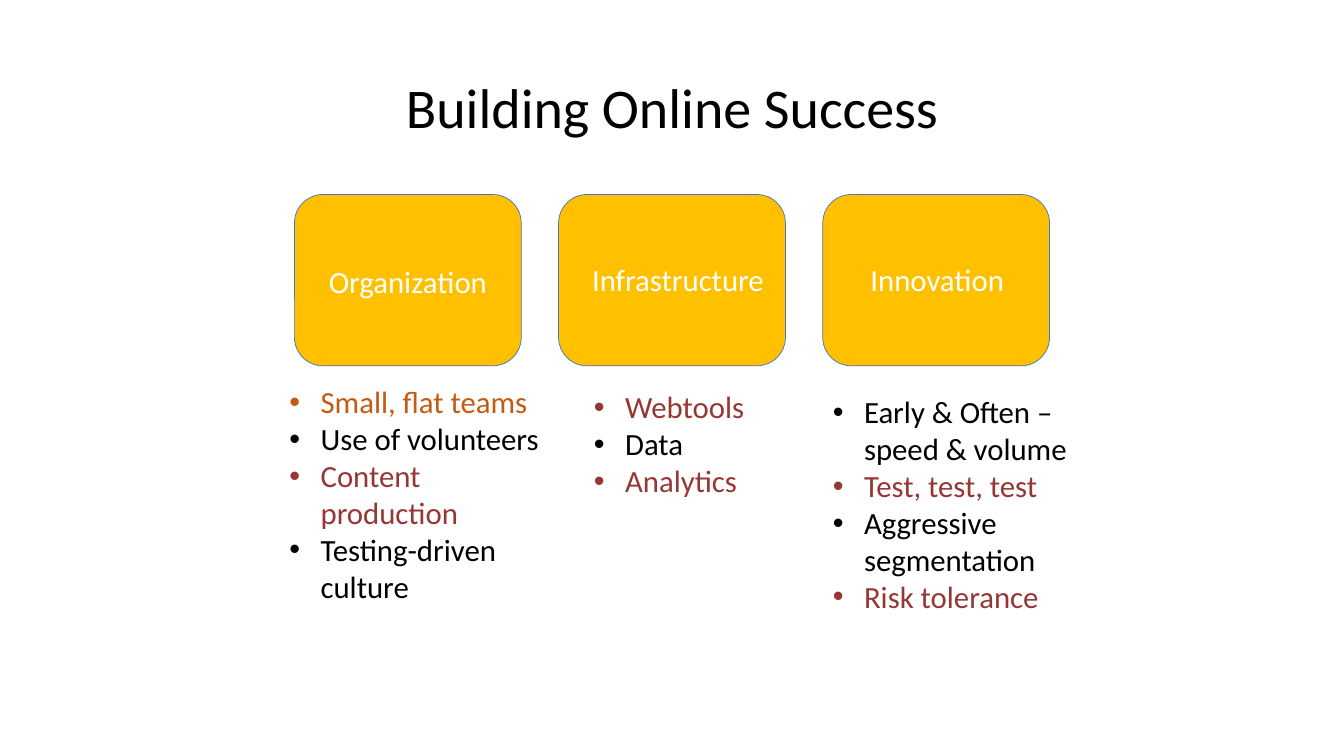
"""Builds the Building Online Success slide."""
from lxml import etree
from pptx import Presentation
from pptx.dml.color import RGBColor
from pptx.enum.shapes import MSO_SHAPE
from pptx.enum.text import MSO_ANCHOR, MSO_AUTO_SIZE, PP_ALIGN
from pptx.oxml.ns import qn
from pptx.util import Emu, Pt

ROUNDED = MSO_SHAPE.ROUNDED_RECTANGLE
TOP, MIDDLE = MSO_ANCHOR.TOP, MSO_ANCHOR.MIDDLE
LEFT, CENTER = PP_ALIGN.LEFT, PP_ALIGN.CENTER
NO_FIT = MSO_AUTO_SIZE.NONE

BLACK = RGBColor(0x00, 0x00, 0x00)
WHITE = RGBColor(0xFF, 0xFF, 0xFF)
ORANGE = RGBColor(0xC5, 0x5A, 0x11)
RED = RGBColor(0x95, 0x37, 0x35)
GOLD = RGBColor(0xFF, 0xC0, 0x00)
BLUE = RGBColor(0x44, 0x72, 0xC4)

FONT = "Calibri"
PX = 9144
TITLE = "Building Online Success"
TITLE_AREA = (250, 52, 833, 106)
BOX_LEFT, BOX_TOP, BOX_WIDTH, BOX_HEIGHT, BOX_STEP = 292, 193, 225, 170, 262
INDENT = 31

PILLARS = [
    {"label": "Organization", "label_area": (304, 256, 201, 47),
     "list_area": (277, 375, 274, 232),
     "items": [("Small, flat teams", ORANGE), ("Use of volunteers", BLACK),
               ("Content production", RED), ("Testing-driven culture", BLACK)]},
    {"label": "Infrastructure", "label_area": (566, 254, 213, 47),
     "list_area": (579, 380, 200, 121),
     "items": [("Webtools", RED), ("Data", BLACK), ("Analytics", RED)]},
    {"label": "Innovation", "label_area": (829, 254, 201, 47),
     "list_area": (816, 385, 268, 232),
     "items": [("Early & Often – speed & volume", BLACK), ("Test, test, test", RED),
               ("Aggressive segmentation", BLACK), ("Risk tolerance", RED)]},
]


def scaled(area):
    return [Emu(length * PX) for length in area]


def place(shape, area):
    shape.left, shape.top, shape.width, shape.height = scaled(area)


def write(shape, lines, size, alignment, anchor):
    frame = shape.text_frame
    frame.text = "\n".join(text for text, color in lines)
    frame.word_wrap = True
    frame.auto_size = NO_FIT
    frame.vertical_anchor = anchor
    for paragraph, (text, color) in zip(frame.paragraphs, lines):
        paragraph.alignment = alignment
        paragraph.space_before = Pt(0)
        font = paragraph.runs[0].font
        font.name, font.size, font.bold = FONT, Pt(size), False
        font.color.rgb = color


def add_bullets(shape):
    for paragraph in shape.text_frame.paragraphs:
        properties = paragraph._p.get_or_add_pPr()
        properties.set("marL", str(INDENT * PX))
        properties.set("indent", str(-INDENT * PX))
        etree.SubElement(properties, qn("a:buFont"), typeface="Arial")
        etree.SubElement(properties, qn("a:buChar"), char="•")


def add_box(slide, column):
    area = (BOX_LEFT + column * BOX_STEP, BOX_TOP, BOX_WIDTH, BOX_HEIGHT)
    box = slide.shapes.add_shape(ROUNDED, *scaled(area))
    box.shadow.inherit = False
    box.fill.solid()
    box.fill.fore_color.rgb = GOLD
    box.line.color.rgb = BLUE
    box.line.width = Pt(0.5)


def main():
    presentation = Presentation()
    presentation.slide_width, presentation.slide_height = scaled((1333, 750))
    slide = presentation.slides.add_slide(presentation.slide_layouts.get_by_name("Comparison"))
    title, *bodies = slide.placeholders
    place(title, TITLE_AREA)
    write(title, [(TITLE, BLACK)], 40, CENTER, MIDDLE)

    for column, (pillar, body) in enumerate(zip(PILLARS, bodies)):
        add_box(slide, column)
        label = slide.shapes.add_textbox(*scaled(pillar["label_area"]))
        write(label, [(pillar["label"], WHITE)], 22, CENTER, TOP)
        place(body, pillar["list_area"])
        write(body, pillar["items"], 22, LEFT, TOP)
        add_bullets(body)

    for unused in bodies[len(PILLARS):]:
        unused.element.getparent().remove(unused.element)
    presentation.save("out.pptx")


if __name__ == "__main__":
    main()
